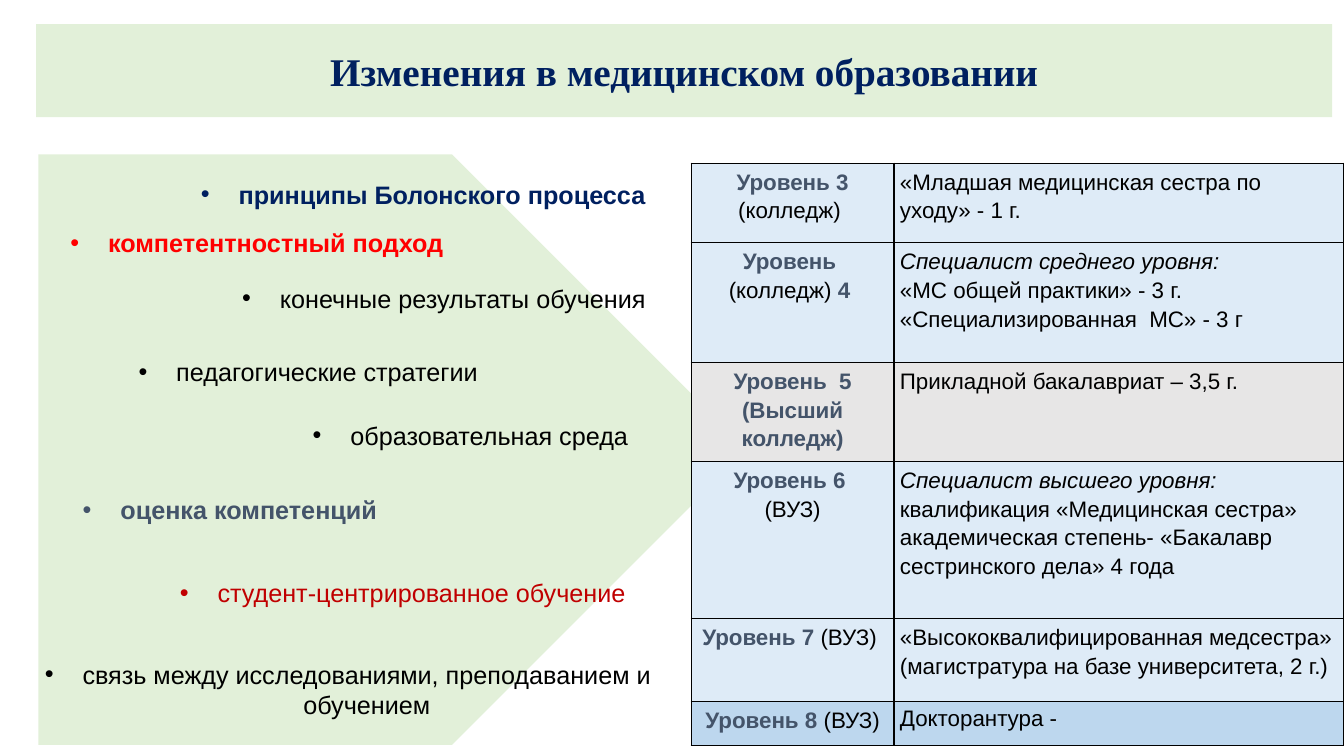
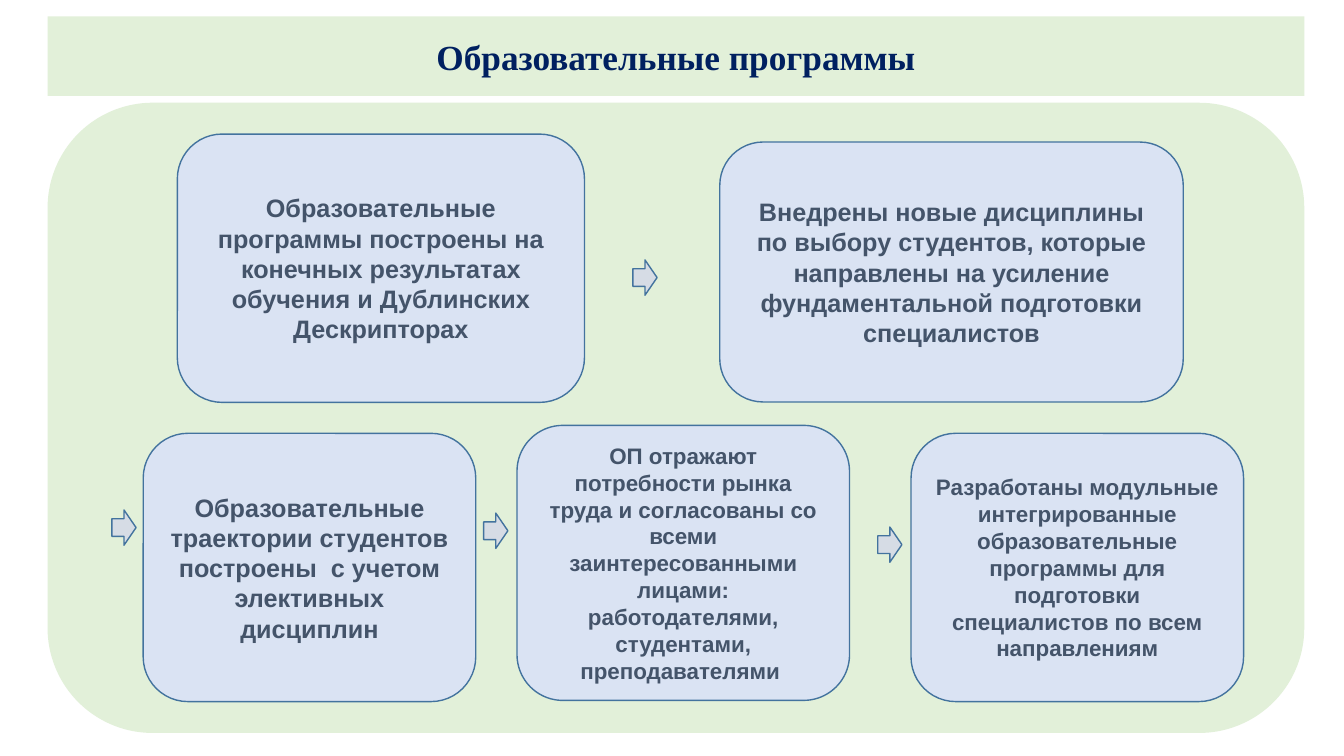
from lxml import etree
from pptx import Presentation
from pptx.dml.color import RGBColor
from pptx.enum.shapes import MSO_SHAPE
from pptx.enum.text import MSO_ANCHOR, MSO_AUTO_SIZE, PP_ALIGN
from pptx.oxml.ns import qn
from pptx.util import Cm, Pt

PENTAGON, ROUNDED, ARROW = MSO_SHAPE.PENTAGON, MSO_SHAPE.ROUNDED_RECTANGLE, MSO_SHAPE.RIGHT_ARROW
MIDDLE, TOP = MSO_ANCHOR.MIDDLE, MSO_ANCHOR.TOP
CENTER, LEFT = PP_ALIGN.CENTER, PP_ALIGN.LEFT
FIXED, GROW = MSO_AUTO_SIZE.NONE, MSO_AUTO_SIZE.SHAPE_TO_FIT_TEXT

COLORS = {
    "band": "E2F0D9", "navy": "002060", "slate": "44546A", "black": "000000",
    "red": "FF0000", "crimson": "C00000", "card": "DAE3F3", "outline": "43739E",
    "arrow": "D6DCE5", "pale": "DEEBF7", "grey": "E7E6E6", "blue": "BDD7EE",
}
LEVEL = {"color": "slate", "bold": True}
ITALIC = {"italic": True}
INDENT = 0.95

TOPICS = [
    ("принципы Болонского процесса ", 3.78, 0.5, 12.01, {"color": "navy", "bold": True}),
    ("компетентностный подход", 0.5, 1.72, 10.01, {"color": "red", "bold": True}),
    ("конечные результаты обучения", 4.82, 3.12, 10.8, {}),
    ("педагогические стратегии", 2.23, 4.97, 9.14, {}),
    ("образовательная среда", 6.62, 6.57, 8.53, {}),
    ("оценка компетенций", 0.81, 8.45, 8.03, {"color": "slate", "bold": True}),
    ("студент-центрированное обучение", 3.25, 10.54, 11.86, {"color": "crimson"}),
    ("связь между исследованиями, преподаванием и обучением", -0.67, 12.59, 16.94, {}),
]

LEVELS = [
    (2.01, "pale", [[("Уровень 3 ", LEVEL), "(колледж) "]],
     ["«Младшая медицинская сестра по уходу» - 1 г."]),
    (3.02, "pale", [[("Уровень  ", LEVEL), "(колледж) ", ("4 ", LEVEL)]],
     [[("Специалист среднего уровня:", ITALIC)],
      "«МС общей практики» - 3 г. «Специализированная  МС» - 3 г"]),
    (2.01, "grey", [[("Уровень  5", LEVEL)], [("(Высший колледж)", LEVEL)]],
     ["Прикладной бакалавриат – 3,5 г."]),
    (3.96, "pale", [[("Уровень 6 ", LEVEL)], "(ВУЗ)"],
     [[("Специалист высшего уровня:", ITALIC)],
      "квалификация «Медицинская сестра»",
      "академическая степень- «Бакалавр сестринского дела» 4 года"]),
    (2.08, "pale", [[("Уровень 7 ", LEVEL), "(ВУЗ) "]],
     ["«Высококвалифицированная медсестра» (магистратура на базе университета, 2 г.)"]),
    (1.12, "blue", [[("Уровень 8 ", LEVEL), "(ВУЗ)"]], ["Докторантура -"]),
]

PROGRAMS = [
    ("Образовательные программы построены на конечных результатах обучения "
     "и Дублинских Дескрипторах", (3.27, 0.79, 10.26, 6.76), 18),
    ("Внедрены новые дисциплины по выбору студентов, которые направлены на усиление "
     "фундаментальной подготовки специалистов", (16.94, 0.99, 11.68, 6.55), 18),
    ("Образовательные траектории студентов построены  с учетом элективных дисциплин",
     (2.41, 8.33, 8.38, 6.76), 18),
    ("ОП отражают потребности рынка труда и согласованы со всеми заинтересованными лицами: "
     "работодателями, студентами, преподавателями ", (11.83, 8.13, 8.38, 6.93), 16),
    ("Разработаны модульные интегрированные образовательные программы для подготовки "
     "специалистов по всем направлениям", (21.76, 8.33, 8.38, 6.76), 16),
]
STEPS = [(14.75, 3.96), (1.62, 10.26), (10.99, 10.34), (20.92, 10.69)]


def rgb(name):
    """Return the palette colour called name."""
    return RGBColor.from_string(COLORS[name])


def paint(target, color):
    """Fill a shape or cell with a palette colour."""
    target.fill.solid()
    target.fill.fore_color.rgb = rgb(color)


def write_text(frame, paragraphs, *, size=18, font="Arial", color="black", bold=False,
               italic=False, align=CENTER, spacing=1.0, anchor=MIDDLE, bullet=False):
    """Write paragraphs of plain or individually formatted runs into a text frame."""
    frame.vertical_anchor = anchor
    for index, runs in enumerate(paragraphs):
        paragraph = frame.add_paragraph() if index else frame.paragraphs[0]
        paragraph.alignment = align
        paragraph.line_spacing = spacing
        if bullet:
            properties = paragraph.font._element.getparent()
            properties.set("marL", str(Cm(INDENT)))
            properties.set("indent", str(-Cm(INDENT)))
            properties.remove(paragraph.font._element)
            etree.SubElement(properties, qn("a:buFont"), typeface="Arial")
            etree.SubElement(properties, qn("a:buChar"), char="•")
        for item in [runs] if isinstance(runs, str) else runs:
            words, change = (item, {}) if isinstance(item, str) else item
            run = paragraph.add_run()
            run.text = words
            run.font.name = font
            run.font.size = Pt(size)
            run.font.color.rgb = rgb(change.get("color", color))
            run.font.bold = change.get("bold", bold)
            run.font.italic = change.get("italic", italic)


def add_figure(slide, preset, box, fill, outline=None):
    """Add a preset shape with a flat fill and an optional outline."""
    figure = slide.shapes.add_shape(preset, *(Cm(length) for length in box))
    figure.shadow.inherit = False
    paint(figure, fill)
    if outline:
        figure.line.color.rgb = rgb(outline)
        figure.line.width = Pt(1)
    else:
        figure.line.fill.background()
    return figure


def add_titled_slide(deck, heading, box, size):
    """Add a title-only slide whose title sits in a green band."""
    slide = deck.slides.add_slide(deck.slide_layouts[5])
    title = slide.shapes.title
    title.left, title.top, title.width, title.height = (Cm(length) for length in box)
    paint(title, "band")
    title.text_frame.auto_size = FIXED
    write_text(title.text_frame, [heading], size=size, font="Times New Roman",
               color="navy", bold=True)
    return slide


def add_topics(slide, box):
    """Place the scattered topics over a pentagon filling the box."""
    add_figure(slide, PENTAGON, box, "band")
    left, top = box[:2]
    for topic, x, y, width, style in TOPICS:
        wraps = topic == TOPICS[-1][0]
        label = slide.shapes.add_textbox(Cm(left + x), Cm(top + y), Cm(width),
                                         Cm(1.8 if wraps else 1.02))
        label.text_frame.word_wrap = wraps
        label.text_frame.auto_size = GROW
        write_text(label.text_frame, [topic], anchor=TOP, bullet=True, **style)


def add_borders(cell):
    """Draw thin black borders on all sides of a cell."""
    properties = cell._tc.get_or_add_tcPr()
    for side in ("lnL", "lnR", "lnT", "lnB"):
        border = etree.SubElement(properties, qn("a:" + side), w=str(Pt(1)))
        fill = etree.SubElement(border, qn("a:solidFill"))
        etree.SubElement(fill, qn("a:srgbClr"), val=COLORS["black"])


def add_levels(slide, box):
    """Place the table of qualification levels in the box."""
    table = slide.shapes.add_table(len(LEVELS), 2, *(Cm(length) for length in box)).table
    table.first_row = table.horz_banding = False
    level_width = 5.11
    table.columns[0].width = Cm(level_width)
    table.columns[1].width = Cm(box[2] - level_width)
    for row, (height, fill, level, qualification) in enumerate(LEVELS):
        table.rows[row].height = Cm(height)
        for column, (content, align) in enumerate([(level, CENTER), (qualification, LEFT)]):
            cell = table.cell(row, column)
            add_borders(cell)
            paint(cell, fill)
            cell.margin_left = cell.margin_right = Cm(0.15)
            cell.margin_top = cell.margin_bottom = Cm(0.08)
            cell.vertical_anchor = TOP
            last = content == LEVELS[-1][3]
            write_text(cell.text_frame, content, size=16, align=align, anchor=TOP,
                       spacing=1.07 if last else 1.15)


def add_programs(slide, box):
    """Place the program cards and step arrows on a rounded panel."""
    add_figure(slide, ROUNDED, box, "band")
    left, top = box[:2]
    for statement, (x, y, width, height), size in PROGRAMS:
        card = add_figure(slide, ROUNDED, (left + x, top + y, width, height), "card", "outline")
        card.text_frame.word_wrap = True
        write_text(card.text_frame, [statement], size=size, color="slate", bold=True)
    for x, y in STEPS:
        add_figure(slide, ARROW, (left + x, top + y, 0.61, 0.89), "arrow", "outline")


def main():
    """Build and save the two slides."""
    deck = Presentation()
    deck.slide_width, deck.slide_height = Cm(33.87), Cm(19.05)
    changes = add_titled_slide(deck, "Изменения в медицинском образовании",
                               (0.91, 0.61, 32.66, 2.34), 28)
    add_topics(changes, (0.97, 3.89, 17.86, 14.88))
    add_levels(changes, (17.42, 4.11, 16.44, 14.2))
    programs = add_titled_slide(deck, "Образовательные программы",
                                (1.2, 0.41, 31.67, 2.01), 25.2)
    add_programs(programs, (1.2, 2.59, 31.67, 15.88))
    deck.save("out.pptx")


if __name__ == "__main__":
    main()
